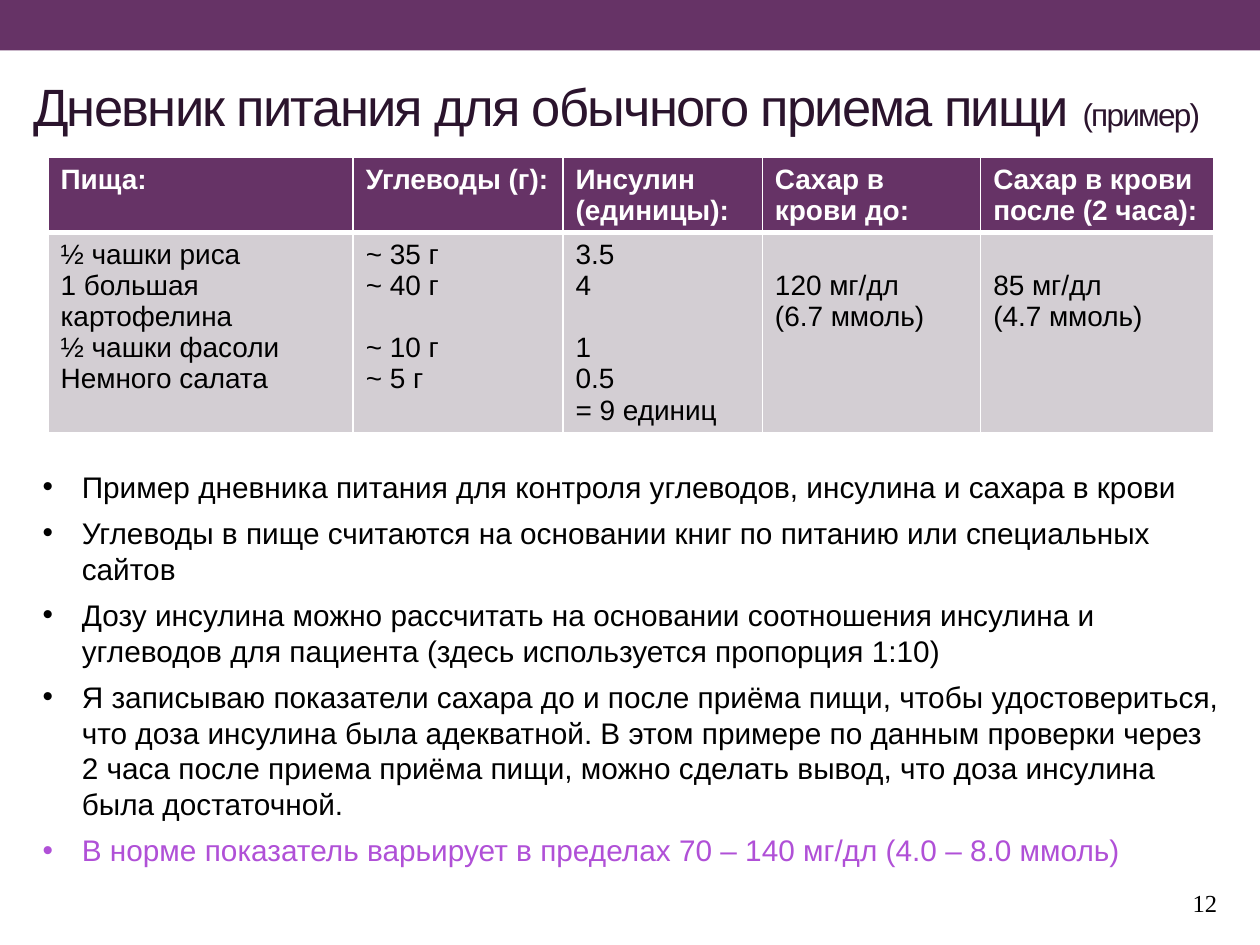
"""Build the food diary slide with its table and explanatory bullets."""
from lxml.etree import SubElement
from pptx import Presentation
from pptx.dml.color import RGBColor
from pptx.enum.shapes import MSO_SHAPE
from pptx.enum.text import MSO_ANCHOR, PP_ALIGN
from pptx.oxml.ns import qn
from pptx.util import Cm, Pt

PURPLE = RGBColor(0x66, 0x33, 0x66)
DARK = RGBColor(0x2B, 0x14, 0x2D)
GREY = RGBColor(0xD3, 0xCE, 0xD3)
VIOLET = RGBColor(0xB0, 0x50, 0xD7)
WHITE = RGBColor(0xFF, 0xFF, 0xFF)
BLACK = RGBColor(0, 0, 0)


def style(r, size, color, bold=False, name="Arial"):
    r.font.size = Pt(size)
    r.font.name = name
    r.font.bold = bold
    r.font.color.rgb = color


def border(cell, side, width):
    ln = SubElement(cell._tc.get_or_add_tcPr(), qn(f"a:{side}"), w=str(Pt(width)))
    fill = SubElement(ln, qn("a:solidFill"))
    SubElement(fill, qn("a:srgbClr"), val=str(WHITE))


prs = Presentation()
prs.slide_width, prs.slide_height = Cm(25.4), Cm(19.05)
s = prs.slides.add_slide(prs.slide_layouts[6])

bar = s.shapes.add_shape(MSO_SHAPE.RECTANGLE, 0, 0, prs.slide_width, Cm(1.02))
bar.shadow.inherit = False
bar.fill.solid()
bar.fill.fore_color.rgb = PURPLE
bar.line.fill.background()

tf = s.shapes.add_textbox(Cm(23.7), Cm(17.78), Cm(1.09), Cm(0.85)).text_frame
tf.text = "12"
tf.paragraphs[0].alignment = PP_ALIGN.RIGHT
style(tf.paragraphs[0].runs[0], 14, BLACK, name="Times New Roman")

tf = s.shapes.add_textbox(Cm(0.42), Cm(1.06), Cm(24.56), Cm(2.12)).text_frame
tf.word_wrap = True
tf.vertical_anchor = MSO_ANCHOR.MIDDLE
for text, size in (("Дневник питания для обычного приема пищи ", 30), ("(пример)", 18)):
    r = tf.paragraphs[0].add_run()
    r.text = text
    style(r, size, DARK)
    r._r.get_or_add_rPr().set("spc", "-100")

LINE = 17.8
columns = [
    (6.15, "Пища:", "½ чашки риса\n1 большая картофелина\n½ чашки фасоли\nНемного салата"),
    (4.23, "Углеводы (г):", "~ 35 г\n~ 40 г\n~ 10 г\n~ 5 г"),
    (4.02, "Инсулин (единицы):", "3.5\n4\n1\n0.5\n= 9 единиц"),
    (4.4, "Сахар в крови до:", "120 мг/дл\n(6.7 ммоль)"),
    (4.7, "Сахар в крови после (2 часа):", "85 мг/дл\n(4.7 ммоль)"),
]
table = s.shapes.add_table(2, len(columns), Cm(0.97), Cm(3.18), Cm(23.5), Cm(5.5)).table
table.rows[0].height, table.rows[1].height = Cm(1.51), Cm(3.99)
for i, (width, *texts) in enumerate(columns):
    table.columns[i].width = Cm(width)
    for j, text in enumerate(texts):
        cell = table.cell(j, i)
        cell.text_frame.text = text
        for side in ("lnL", "lnR", "lnT", "lnB"):
            border(cell, side, 3 if (j, side) in ((0, "lnB"), (1, "lnT")) else 1)
        cell.fill.solid()
        cell.fill.fore_color.rgb = GREY if j else PURPLE
        for p in cell.text_frame.paragraphs:
            p.line_spacing = Pt(LINE)
            style(p.runs[0], 16, BLACK if j else WHITE, bold=j == 0)
    if i in (1, 2):
        cell.text_frame.paragraphs[2].space_before = Pt(LINE)
    if i > 2:
        cell.margin_top = Cm(0.13) + Pt(LINE)

bullets = [
    "Пример дневника питания для контроля углеводов, инсулина и сахара в крови",
    "Углеводы в пище считаются на основании книг по питанию или специальных сайтов",
    "Дозу инсулина можно рассчитать на основании соотношения инсулина и углеводов для "
    "пациента (здесь используется пропорция 1:10)",
    "Я записываю показатели сахара до и после приёма пищи, чтобы удостовериться, что доза "
    "инсулина была адекватной. В этом примере по данным проверки через 2 часа после приема "
    "приёма пищи, можно сделать вывод, что доза инсулина была достаточной.",
    "В норме показатель варьирует в пределах 70 – 140 мг/дл (4.0 – 8.0 ммоль)",
]
tf = s.shapes.add_textbox(Cm(0.61), Cm(9.32), Cm(24.33), Cm(8.38)).text_frame
tf.word_wrap = True
tf.text = "\n".join(bullets)
for p in tf.paragraphs:
    p.space_before = Pt(6)
    style(p.runs[0], 17, VIOLET if p.text == bullets[-1] else BLACK)
    pPr = p._p.get_or_add_pPr()
    pPr.set("marL", str(Cm(0.79)))
    pPr.set("indent", str(Cm(-0.79)))
    SubElement(pPr, qn("a:buFont"), typeface="Arial")
    SubElement(pPr, qn("a:buChar"), char="•")

prs.save("out.pptx")
